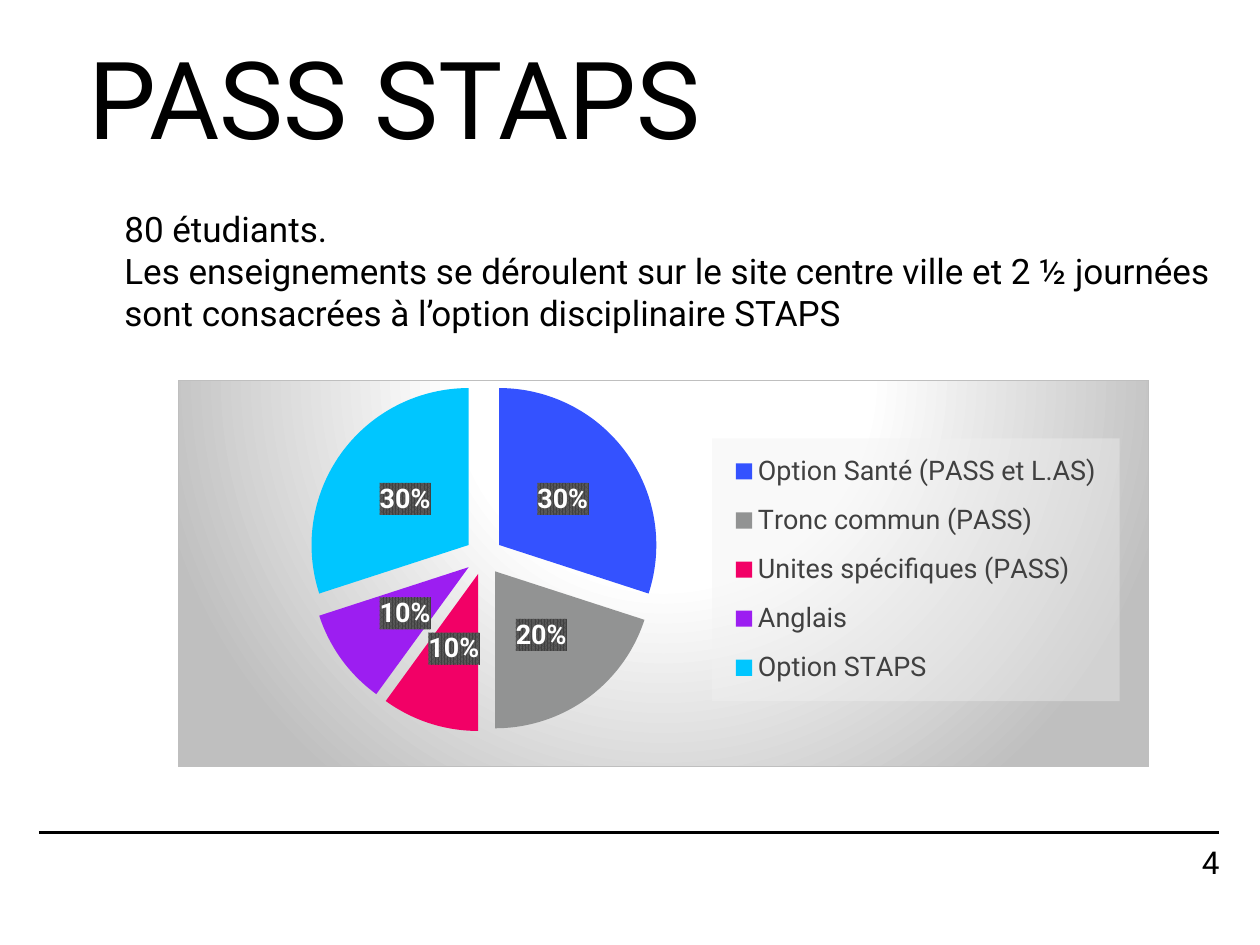
from typing import NamedTuple
from lxml.etree import fromstring
from pptx import Presentation
from pptx.chart.data import CategoryChartData
from pptx.dml.color import RGBColor
from pptx.enum.chart import XL_CHART_TYPE, XL_LABEL_POSITION, XL_LEGEND_POSITION
from pptx.enum.shapes import MSO_CONNECTOR
from pptx.enum.text import MSO_ANCHOR, PP_ALIGN
from pptx.oxml.ns import qn
from pptx.util import Inches, Pt

FONT = "Roboto"
SPACES = (
    'xmlns:a="http://schemas.openxmlformats.org/drawingml/2006/main" '
    'xmlns:c="http://schemas.openxmlformats.org/drawingml/2006/chart"'
)
BACK = """<c:spPr {ns}><a:gradFill><a:gsLst>
<a:gs pos="0"><a:srgbClr val="FFFFFF"/></a:gs>
<a:gs pos="39000"><a:srgbClr val="FFFFFF"/></a:gs>
<a:gs pos="100000"><a:srgbClr val="BFBFBF"/></a:gs></a:gsLst>
<a:path path="circle"><a:fillToRect l="50000" t="-80000" r="50000" b="180000"/></a:path>
</a:gradFill><a:ln w="9525"><a:solidFill><a:srgbClr val="BFBFBF"/></a:solidFill></a:ln></c:spPr>"""
PANEL = """<c:spPr {ns}><a:solidFill><a:srgbClr val="F2F2F2">
<a:alpha val="39000"/></a:srgbClr></a:solidFill></c:spPr>"""
BADGE = """<c:spPr {ns}><a:pattFill prst="pct75"><a:fgClr><a:srgbClr val="404040"/></a:fgClr>
<a:bgClr><a:srgbClr val="595959"/></a:bgClr></a:pattFill></c:spPr>"""
BLAST = '<c:explosion {ns} val="12"/>'
LAYOUT = """<c:layout {ns}><c:manualLayout>{inner}<c:xMode val="edge"/><c:yMode val="edge"/>
<c:x val="{x}"/><c:y val="{y}"/><c:w val="{w}"/><c:h val="{h}"/></c:manualLayout></c:layout>"""
INNER = '<c:layoutTarget val="inner"/>'


class Box(NamedTuple):
    """A place and size: inches on the slide, shares in the chart."""
    x: float
    y: float
    w: float
    h: float


class Slice(NamedTuple):
    """One share of the teaching time."""
    name: str
    share: int
    fill: str


SLICES = [
    Slice("Option Santé (PASS et L.AS)", 30, "3452FF"),
    Slice("Tronc commun (PASS)", 20, "929393"),
    Slice("Unites spécifiques (PASS)", 10, "F20066"),
    Slice("Anglais", 10, "9C1EF1"),
    Slice("Option STAPS", 30, "00C6FF"),
]


def color(code: str) -> RGBColor:
    """Turn a hex string into a colour."""
    return RGBColor.from_string(code)


def style(font, size: float, code: str = "000000", bold: bool = False) -> None:
    """Set the face, size, colour and weight of a font."""
    font.name, font.size, font.bold = FONT, Pt(size), bold
    font.color.rgb = color(code)


def node(text: str, **parts):
    """Build a chart element from a template."""
    return fromstring(text.format(ns=SPACES, **parts))


def place(owner, box: Box, inner: str = ""):
    """Give a chart part a fixed layout and return its element."""
    old = owner.find(qn("c:layout"))
    if old is not None:
        owner.remove(old)
    item = node(LAYOUT, inner=inner, **box._asdict())
    if inner:
        owner.insert(0, item)
    else:
        owner.find(qn("c:legendPos")).addnext(item)
    return item


def write(shape, lines: list[str], size: float, box: Box, pad: bool = False,
          align=PP_ALIGN.LEFT, anchor=MSO_ANCHOR.TOP, gap: float = 1.0) -> None:
    """Move a text shape and fill it with paragraphs."""
    shape.left, shape.top, shape.width, shape.height = map(Inches, box)
    frame = shape.text_frame
    frame.word_wrap, frame.vertical_anchor = True, anchor
    if not pad:
        frame.margin_left = frame.margin_right = 0
        frame.margin_top = frame.margin_bottom = 0
    for i, line in enumerate(lines):
        para = frame.add_paragraph() if i else frame.paragraphs[0]
        para.alignment, para.line_spacing = align, gap
        run = para.add_run()
        run.text = line
        style(run.font, size)


def rule(slide) -> None:
    """Draw the line above the page number."""
    line = slide.shapes.add_connector(
        MSO_CONNECTOR.STRAIGHT, Inches(0.48), Inches(10.3), Inches(15.08), Inches(10.3))
    line.line.color.rgb, line.line.width = color("000000"), Pt(2)
    line._element.spPr.append(node("<a:effectLst {ns}/>"))


def pie(slide, box: Box) -> None:
    """Add the exploded pie of teaching shares."""
    data = CategoryChartData()
    data.categories = [item.name for item in SLICES]
    data.add_series("Series 1", [item.share for item in SLICES])
    chart = slide.shapes.add_chart(XL_CHART_TYPE.PIE, *map(Inches, box), data).chart
    style(chart.font, 10)
    chart.has_title = False
    root = chart._chartSpace.find(qn("c:chart"))
    root.addnext(node(BACK))
    place(root.find(qn("c:plotArea")), Box(0, 0, 0.63, 0.91), INNER)

    plot = chart.plots[0]
    plot.vary_by_categories = True
    series = plot.series[0]
    series._element.find(qn("c:tx")).addnext(node(BLAST))
    for i, item in enumerate(SLICES):
        fill = series.points[i].format.fill
        fill.solid()
        fill.fore_color.rgb = color(item.fill)

    labels = series.data_labels
    labels.show_percentage, labels.show_value = True, False
    labels.number_format, labels.number_format_is_linked = "0%", False
    labels.position = XL_LABEL_POSITION.CENTER
    style(labels.font, 24, "FFFFFF", True)
    labels._element.find(qn("c:txPr")).addprevious(node(BADGE))

    chart.has_legend = True
    legend = chart.legend
    legend.position, legend.include_in_layout = XL_LEGEND_POSITION.RIGHT, False
    style(legend.font, 24, "404040")
    place(legend._element, Box(0.55, 0.15, 0.42, 0.68))
    legend._element.find(qn("c:txPr")).addprevious(node(PANEL))


def main() -> None:
    """Build and save the slide."""
    deck = Presentation()
    deck.slide_width, deck.slide_height = Inches(15.59), Inches(11.69)
    slide = deck.slides.add_slide(deck.slide_layouts[5])
    rule(slide)
    write(slide.shapes.title, ["PASS STAPS"], 96, Box(1.1, 0.57, 12.13, 1.45), gap=0.9)
    page = slide.shapes.add_textbox(0, 0, 0, 0)
    write(page, ["4"], 28, Box(12.8, 10.43, 2.29, 0.47),
          align=PP_ALIGN.RIGHT, anchor=MSO_ANCHOR.MIDDLE)
    intro = slide.shapes.add_textbox(0, 0, 0, 0)
    write(intro, [
        "80 étudiants.",
        "Les enseignements se déroulent sur le site centre ville et 2 ½ journées "
        "sont consacrées à l’option disciplinaire STAPS",
    ], 31.2, Box(1.44, 2.52, 13.75, 1.68), pad=True)
    pie(slide, Box(2.2, 4.7, 12.02, 4.79))
    deck.save("out.pptx")


if __name__ == "__main__":
    main()
